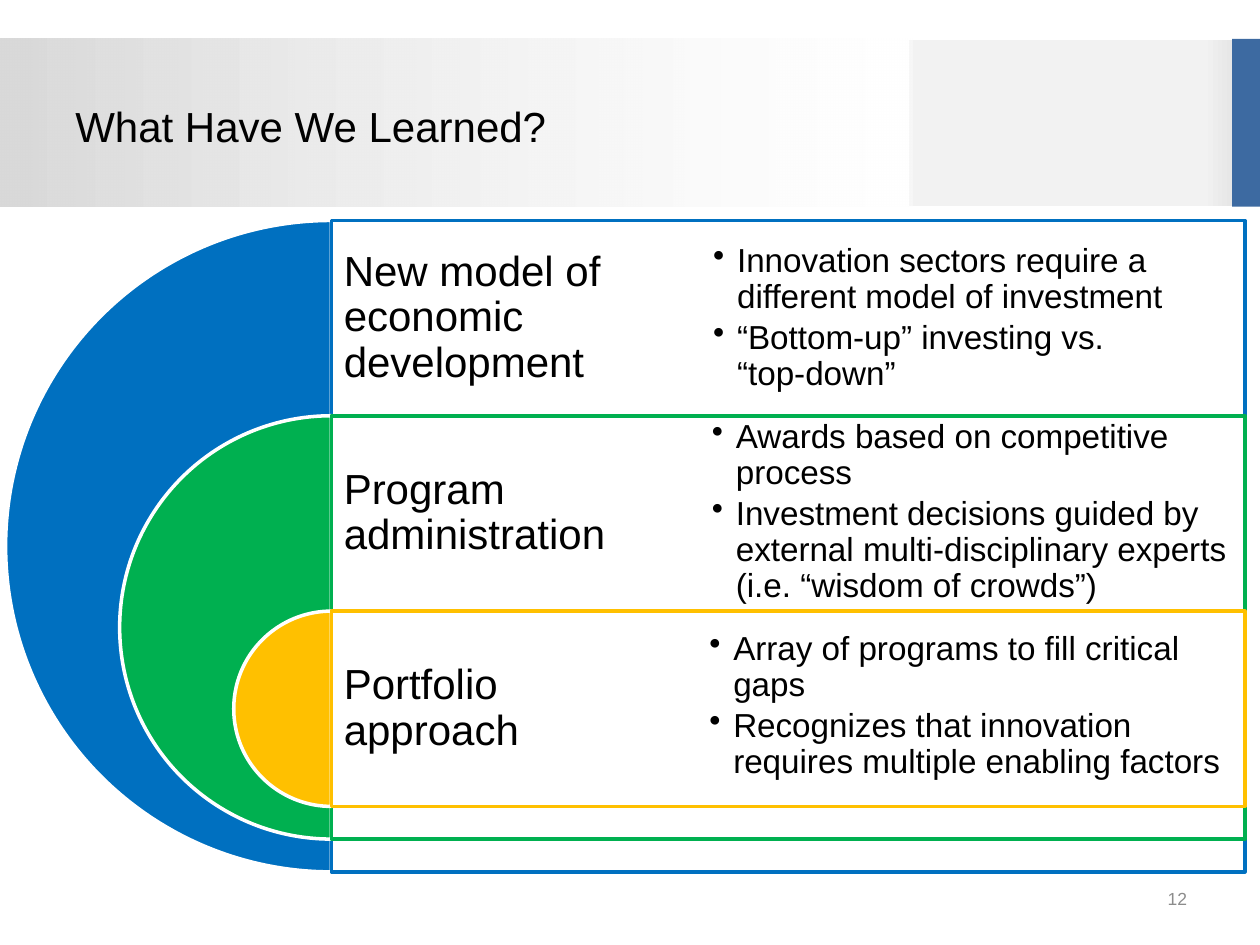
from dataclasses import dataclass

import pptx
import pptx.dml.color
import pptx.enum.shapes
import pptx.enum.text
import pptx.oxml
import pptx.oxml.ns
import pptx.util

Inches = pptx.util.Inches
Pt = pptx.util.Pt
Kind = pptx.enum.shapes.MSO_SHAPE
Align = pptx.enum.text.PP_ALIGN


@dataclass(frozen=True)
class Theme:
    font: str = "Arial"
    head: float = 24
    body: float = 19
    small: float = 10
    ink: str = "000000"
    gray: str = "8C8C8C"
    white: str = "FFFFFF"
    dark: str = "D9D9D9"
    light: str = "F2F2F2"
    bar: str = "3D6AA1"


@dataclass(frozen=True)
class Box:
    left: float
    top: float
    width: float
    height: float

    def emu(self) -> tuple:
        return tuple(Inches(n) for n in (self.left, self.top, self.width, self.height))


@dataclass(frozen=True)
class Layer:
    color: str
    title: str
    points: tuple
    area: Box


THEME = Theme()
ROW = 1.55
TOP = 1.75
EDGE = 2.63
STEP = 1.81
LAYERS = (
    Layer("0070C0", "New model of economic development",
          ("Innovation sectors require a different model of investment",
           "“Bottom-up” investing vs.\v“top-down”"),
          Box(5.39, 1.75, 4.77, ROW)),
    Layer("00B050", "Program administration",
          ("Awards based on competitive process",
           "Investment decisions guided by external multi-disciplinary experts "
           "(i.e. “wisdom of crowds”)"),
          Box(5.38, 3.29, 4.78, ROW)),
    Layer("FFC000", "Portfolio\vapproach",
          ("Array of programs to fill critical gaps",
           "Recognizes that innovation requires multiple enabling factors"),
          Box(5.36, 4.83, 4.66, ROW)),
)


def rgb(code: str):
    return pptx.dml.color.RGBColor.from_string(code)


def tag(name: str, **attrs: str):
    node = pptx.oxml.parse_xml(f"<a:{name} {pptx.oxml.ns.nsdecls('a')}/>")
    for key, value in attrs.items():
        node.set(key, value)
    return node


def fade(shape, share: int) -> None:
    """Set the opacity, in percent, of the last colour in the shape's properties."""
    colors = list(shape.element.spPr.iter(pptx.oxml.ns.qn("a:srgbClr")))
    colors[-1].append(tag("alpha", val=str(share * 1000)))


def draw(slide, kind, box: Box, fill=None, stops=(), angle=0, alpha=100,
         line=None, weight=2.0):
    """Add a shape with a plain fill, or a gradient of (position, colour) stops."""
    shape = slide.shapes.add_shape(kind, *box.emu())
    shape.shadow.inherit = False
    if stops:
        shape.fill.gradient()
        shape.fill.gradient_angle = angle
        for stop, (place, color) in zip(shape.fill.gradient_stops, stops):
            stop.position = place
            stop.color.rgb = rgb(color)
    else:
        shape.fill.solid()
        shape.fill.fore_color.rgb = rgb(fill)
    if alpha < 100:
        fade(shape, alpha)
    if line:
        shape.line.color.rgb = rgb(line)
        shape.line.width = Pt(weight)
    else:
        shape.line.fill.background()
    return shape


def write(slide, box: Box, *texts: str, size=THEME.head, color=THEME.ink,
          align=Align.LEFT, inset=None, pitch=None, after=0, bullet=False) -> None:
    frame = slide.shapes.add_textbox(*box.emu()).text_frame
    frame.word_wrap = True
    frame.vertical_anchor = pptx.enum.text.MSO_ANCHOR.MIDDLE
    if inset is not None:
        frame.margin_left = frame.margin_right = Inches(inset)
        frame.margin_top = frame.margin_bottom = Inches(inset)
    for index, text in enumerate(texts):
        para = frame.add_paragraph() if index else frame.paragraphs[0]
        para.text = text
        para.alignment = align
        if pitch:
            para.line_spacing = pitch
            para.space_after = Pt(after)
        if bullet:
            props = para._p.get_or_add_pPr()
            props.set("marL", str(Inches(0.19)))
            props.set("indent", str(-Inches(0.19)))
            props.append(tag("buChar", char="•"))
        for run in para.runs:
            run.font.name = THEME.font
            run.font.size = Pt(size)
            run.font.color.rgb = rgb(color)


def banner(slide) -> None:
    top, tall = 0.31, 1.33
    draw(slide, Kind.RECTANGLE, Box(7.21, top, 2.79, tall), angle=180,
         stops=((0, THEME.dark), (0.16, THEME.light)), line=THEME.white, weight=0.75)
    draw(slide, Kind.RECTANGLE, Box(9.78, top, 0.24, tall), fill=THEME.bar)
    draw(slide, Kind.RECTANGLE, Box(0, top, 7.24, tall), alpha=41,
         stops=((0, THEME.dark), (1, THEME.white)))


def target(slide) -> None:
    """Draw nested half discs, each with its framed row to the right."""
    for index, layer in enumerate(LAYERS):
        top = TOP + index * ROW
        size = ROW + STEP * (len(LAYERS) - 1 - index)
        disc = draw(slide, Kind.PIE, Box(EDGE - size / 2, top, size, size),
                    fill=layer.color, line=THEME.white)
        disc.adjustments[0] = 54
        disc.adjustments[1] = 162
        draw(slide, Kind.RECTANGLE, Box(EDGE, top, 7.25, size), fill=THEME.white,
             alpha=90, line=layer.color)
        write(slide, Box(EDGE, top, 3.62, ROW), layer.title, inset=0.1,
              pitch=0.9, after=8)
    for layer in LAYERS:
        write(slide, layer.area, *layer.points, size=THEME.body, inset=0.27,
              pitch=0.9, after=3, bullet=True)


def main() -> None:
    deck = pptx.Presentation()
    deck.slide_width = Inches(10)
    deck.slide_height = Inches(7.5)
    slide = deck.slides.add_slide(deck.slide_layouts[6])
    banner(slide)
    write(slide, Box(7.19, 6.93, 2.33, 0.4), "12", size=THEME.small,
          color=THEME.gray, align=Align.RIGHT)
    write(slide, Box(0.5, 0.58, 6.33, 0.83), "What Have We Learned?")
    target(slide)
    deck.save("out.pptx")


if __name__ == "__main__":
    main()
